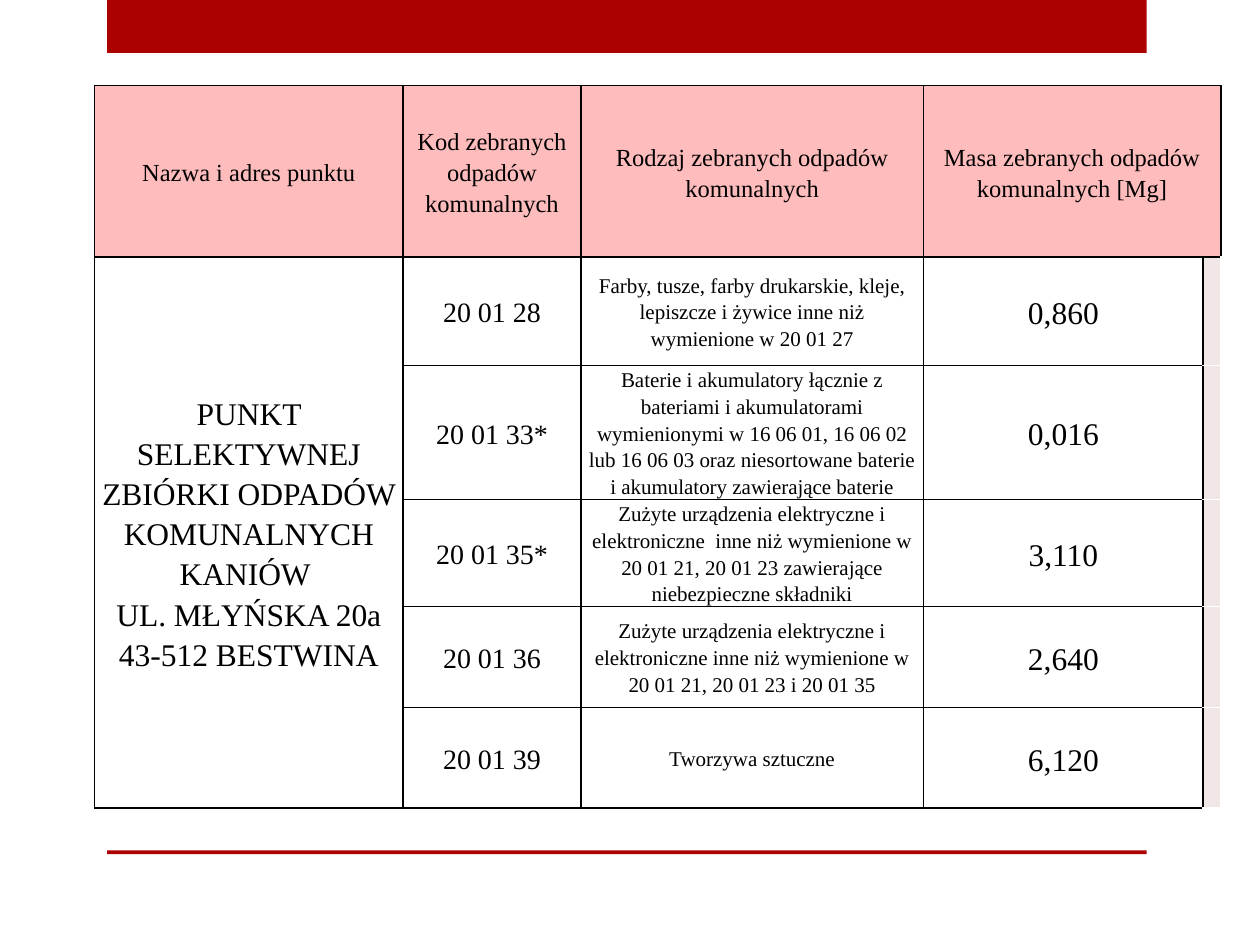
"""Build a slide with a table of municipal waste collected at one point."""
import pptx
import pptx.dml.color
import pptx.enum.shapes
import pptx.enum.text
import pptx.oxml
import pptx.oxml.ns
import pptx.util

Inches = pptx.util.Inches
RGBColor = pptx.dml.color.RGBColor
RED = RGBColor(0xAD, 0x01, 0x01)
PINK = RGBColor(0xFF, 0xBC, 0xBC)
PALE = RGBColor(0xF1, 0xE7, 0xE7)
BLACK = RGBColor(0, 0, 0)
WHITE = RGBColor(0xFF, 0xFF, 0xFF)

WIDTHS = [2.45, 1.41, 2.72, 2.22, 0.1]
HEIGHTS = [1.36, 0.86] + [0.8] * 4
SIZES = [18, 16, 12, 18]
HEAD = [
    "Nazwa i adres punktu",
    "Kod zebranych odpadów komunalnych",
    "Rodzaj zebranych odpadów komunalnych",
    "Masa zebranych odpadów komunalnych [Mg]",
]
POINT = (
    "PUNKT SELEKTYWNEJ ZBIÓRKI ODPADÓW KOMUNALNYCH KANIÓW \v"
    "UL. MŁYŃSKA 20a\n43-512 BESTWINA"
)
WASTE = [
    ("20 01 28",
     "Farby, tusze, farby drukarskie, kleje, lepiszcze i żywice inne niż "
     "wymienione w 20 01 27", "0,860"),
    ("20 01 33*",
     "Baterie i akumulatory łącznie z bateriami i akumulatorami wymienionymi "
     "w 16 06 01, 16 06 02 lub 16 06 03 oraz niesortowane baterie "
     "i akumulatory zawierające baterie", "0,016"),
    ("20 01 35*",
     "Zużyte urządzenia elektryczne i elektroniczne  inne niż wymienione "
     "w 20 01 21, 20 01 23 zawierające niebezpieczne składniki", "3,110"),
    ("20 01 36",
     "Zużyte urządzenia elektryczne i elektroniczne inne niż wymienione "
     "w 20 01 21, 20 01 23 i 20 01 35", "2,640"),
    ("20 01 39", "Tworzywa sztuczne", "6,120"),
]


def write(frame, text, size=14, font="Times New Roman", color=BLACK, space=1.15):
    frame.text = text
    for para in frame.paragraphs:
        para.alignment = pptx.enum.text.PP_ALIGN.CENTER
        para.line_spacing = space
        for run in para.runs:
            run.font.size = pptx.util.Pt(size)
            run.font.name = font
            run.font.bold = False
            run.font.color.rgb = color


class Deck:
    def __init__(self):
        self.show = pptx.Presentation()
        self.show.slide_width, self.show.slide_height = Inches(10), Inches(7.5)
        self.slide = self.show.slides.add_slide(self.show.slide_layouts[6])
        self.edge = pptx.util.Pt(1)

    def bar(self, left, top, width, height, color=RED):
        kind = pptx.enum.shapes.MSO_SHAPE.RECTANGLE
        shape = self.slide.shapes.add_shape(
            kind, Inches(left), Inches(top), Inches(width), Inches(height))
        shape.shadow.inherit = False
        shape.fill.solid()
        shape.fill.fore_color.rgb = color
        shape.line.fill.background()

    def grid(self, left, top, widths, heights):
        frame = self.slide.shapes.add_table(
            len(heights), len(widths), Inches(left), Inches(top),
            Inches(sum(widths)), Inches(sum(heights)))
        table = frame.table
        table.first_row = table.horz_banding = False
        for col, width in zip(table.columns, widths):
            col.width = Inches(width)
        for row, height in zip(table.rows, heights):
            row.height = Inches(height)
        return table

    def cell(self, cell, fill=None, **edges):
        cell.margin_left = cell.margin_right = Inches(0.05)
        cell.margin_top = cell.margin_bottom = 0
        cell.vertical_anchor = pptx.enum.text.MSO_ANCHOR.MIDDLE
        props = cell._tc.get_or_add_tcPr()
        for side in "LRTB":
            color = edges.get(side, BLACK)
            props.append(pptx.oxml.parse_xml(
                f'<a:ln{side} {pptx.oxml.ns.nsdecls("a")} w="{self.edge}">'
                f'<a:solidFill><a:srgbClr val="{color}"/></a:solidFill>'
                f'</a:ln{side}>'))
        if fill is None:
            cell.fill.background()
        else:
            cell.fill.solid()
            cell.fill.fore_color.rgb = fill


def main():
    deck = Deck()
    deck.bar(0.85, 0, 8.25, 0.42)
    deck.bar(0.85, 6.75, 8.25, 0.03)
    table = deck.grid(0.75, 0.68, WIDTHS, HEIGHTS)
    last = len(WIDTHS) - 1
    for row in range(len(HEIGHTS)):
        for col in range(len(WIDTHS)):
            cell = table.cell(row, col)
            if row == 0:
                deck.cell(cell, PINK)
            elif col == last:
                top = BLACK if row == 1 else WHITE
                deck.cell(cell, PALE, T=top, R=WHITE, B=WHITE)
            else:
                deck.cell(cell)
    table.cell(0, last - 1).merge(table.cell(0, last))
    table.cell(1, 0).merge(table.cell(len(WASTE), 0))
    for col, text in enumerate(HEAD):
        write(table.cell(0, col).text_frame, text)
    write(table.cell(1, 0).text_frame, POINT, size=SIZES[0])
    for row, item in enumerate(WASTE, 1):
        for col, text in enumerate(item, 1):
            write(table.cell(row, col).text_frame, text, size=SIZES[col])
    deck.show.save("out.pptx")


if __name__ == "__main__":
    main()
